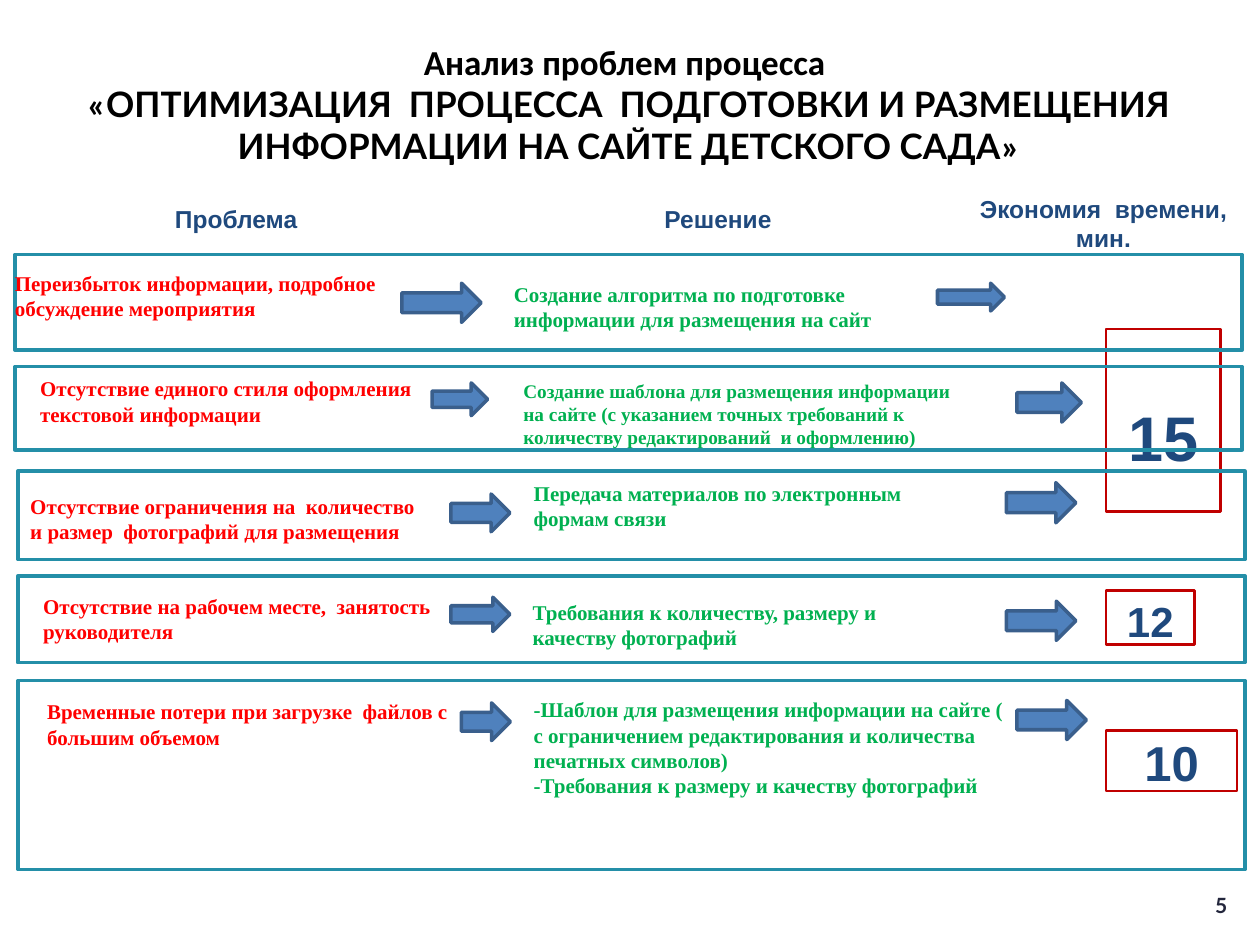
from pptx import Presentation
from pptx.dml.color import RGBColor
from pptx.enum.shapes import MSO_SHAPE
from pptx.enum.text import MSO_ANCHOR, PP_ALIGN
from pptx.util import Cm, Pt

COLORS = {
    "black": "000000", "page": "23263C", "navy": "1F497D",
    "problem": "FF0000", "solution": "00B050", "frame": "248FA8",
    "saving": "C00000", "arrow": "4F81BD", "arrow_line": "3A5F8C",
}

HEADERS = [
    ("Проблема", (2.69, 0.2, 4.14, 0.6)),
    ("Решение", (12.52, 0.2, 3.91, 0.6)),
    ("Экономия  времени, мин.", (19.35, 0, 5.79, 1.2)),
]

SAVINGS = [
    ("15", 36, 0.65, (22.3, 6.63, 2.31, 3.68)),
    ("12", 24, 0.12, (22.3, 11.91, 1.78, 1.09)),
    ("10", 28, 0.05, (22.3, 14.73, 2.64, 1.22)),
]

ROWS = [
    dict(box=(0.3, 5.13, 24.74, 1.93),
         problem=("Переизбыток информации, подробное\nобсуждение мероприятия",
                  (0, 0.33, 9.65, 1)),
         solution=("Создание алгоритма по подготовке информации для размещения на сайт",
                   (10.06, 0.55, 8.13, 1), 12),
         arrows=[(7.8, 0.58, 1.6, 0.79), (18.6, 0.58, 1.35, 0.56)]),
    dict(box=(0.3, 7.39, 24.74, 1.68),
         problem=("Отсутствие единого стиля оформления текстовой информации",
                  (0.51, 0.19, 8.3, 1)),
         solution=("Создание шаблона для размещения информации на сайте "
                   "(с указанием точных требований к количеству "
                   "редактирований  и оформлению)", (10.25, 0.25, 8.89, 1.4), 11),
         arrows=[(8.41, 0.33, 1.12, 0.66), (20.2, 0.33, 1.3, 0.79)]),
    dict(box=(0.36, 9.5, 24.74, 1.78),
         problem=("Отсутствие ограничения на  количество \v"
                  "и размер  фотографий для размещения", (0.25, 0.44, 9.14, 1)),
         solution=("Передача материалов по электронным формам связи",
                   (10.4, 0.18, 7.82, 1), 12),
         arrows=[(8.73, 0.46, 1.19, 0.76), (19.93, 0.23, 1.4, 0.81)]),
    dict(box=(0.36, 11.61, 24.74, 1.75),
         problem=("Отсутствие на рабочем месте,  занятость руководителя",
                  (0.51, 0.36, 8.61, 1)),
         solution=("Требования к количеству, размеру и качеству фотографий",
                   (10.38, 0.47, 7.82, 1), 12),
         arrows=[(8.73, 0.43, 1.19, 0.69), (19.93, 0.51, 1.4, 0.79)]),
    dict(box=(0.36, 13.72, 24.74, 3.81),
         problem=("Временные потери при загрузке  файлов с большим объемом",
                  (0.59, 0.37, 8.61, 1)),
         solution=("-Шаблон для размещения информации на сайте ( с ограничением "
                   "редактирования и количества печатных символов)\n"
                   "-Требования к размеру и качеству фотографий",
                   (10.4, 0.33, 9.47, 2), 12),
         arrows=[(8.94, 0.45, 0.99, 0.76), (20.14, 0.4, 1.4, 0.79)]),
]


def rgb(name):
    return RGBColor.from_string(COLORS[name])


def inside(box, part):
    x, y, w, h = part
    return box[0] + x, box[1] + y, w, h


def style_text(sp, text, size, font, color, align, anchor, pad_top=0):
    tf = sp.text_frame
    tf.word_wrap = True
    tf.margin_left = tf.margin_right = tf.margin_bottom = 0
    tf.margin_top = Cm(pad_top)
    tf.vertical_anchor = anchor
    tf.text = text
    for p in tf.paragraphs:
        p.alignment = align
        p.font.size = Pt(size)
        p.font.name = font
        p.font.bold = True
        p.font.color.rgb = rgb(color)
    return tf


def add_text(s, box, text, size, font, color,
             align=PP_ALIGN.LEFT, anchor=MSO_ANCHOR.TOP):
    sp = s.shapes.add_textbox(*map(Cm, box))
    return style_text(sp, text, size, font, color, align, anchor)


def add_shape(s, kind, box, line, width, fill=None):
    sp = s.shapes.add_shape(kind, *map(Cm, box))
    sp.shadow.inherit = False
    if fill:
        sp.fill.solid()
        sp.fill.fore_color.rgb = rgb(fill)
    else:
        sp.fill.background()
    sp.line.color.rgb = rgb(line)
    sp.line.width = Pt(width)
    return sp


def add_title(s, box):
    tf = add_text(s, box, "Анализ проблем процесса \v«", 20, "Calibri", "black",
                  PP_ALIGN.CENTER, MSO_ANCHOR.MIDDLE)
    p = tf.paragraphs[0]
    for text, font in [
        ("ОПТИМИЗАЦИЯ  ПРОЦЕССА  ПОДГОТОВКИ И РАЗМЕЩЕНИЯ "
         "ИНФОРМАЦИИ НА САЙТЕ ДЕТСКОГО САДА", "Lato"),
        ("»", "Calibri"),
    ]:
        r = p.add_run()
        r.text = text
        r.font.name = font


def add_headers(s, box):
    for text, part in HEADERS:
        add_text(s, inside(box, part), text, 14, "Arial", "navy", PP_ALIGN.CENTER)


def add_saving(s, box, text, size, pad_top):
    sp = add_shape(s, MSO_SHAPE.RECTANGLE, box, "saving", 1.5)
    style_text(sp, text, size, "Arial", "navy",
               PP_ALIGN.CENTER, MSO_ANCHOR.MIDDLE, pad_top)


def add_row(s, box, problem, solution, arrows):
    add_shape(s, MSO_SHAPE.RECTANGLE, box, "frame", 2)
    for part in arrows:
        add_shape(s, MSO_SHAPE.RIGHT_ARROW, inside(box, part), "arrow_line", 2, "arrow")
    text, part = problem
    add_text(s, inside(box, part), text, 12, "Times New Roman", "problem")
    text, part, size = solution
    add_text(s, inside(box, part), text, size, "Times New Roman", "solution")


def main():
    prs = Presentation()
    prs.slide_width, prs.slide_height = Cm(25.4), Cm(19.05)
    s = prs.slides.add_slide(prs.slide_layouts[6])
    add_title(s, (0.86, 0.91, 23.63, 2.36))
    add_headers(s, (0, 3.91))
    for text, size, pad_top, box in SAVINGS:
        add_saving(s, box, text, size, pad_top)
    for row in ROWS:
        add_row(s, **row)
    add_text(s, (24, 17.86, 1.24, 0.79), "5", 12, "Lato", "page",
             PP_ALIGN.CENTER, MSO_ANCHOR.MIDDLE)
    prs.save("out.pptx")


if __name__ == "__main__":
    main()
